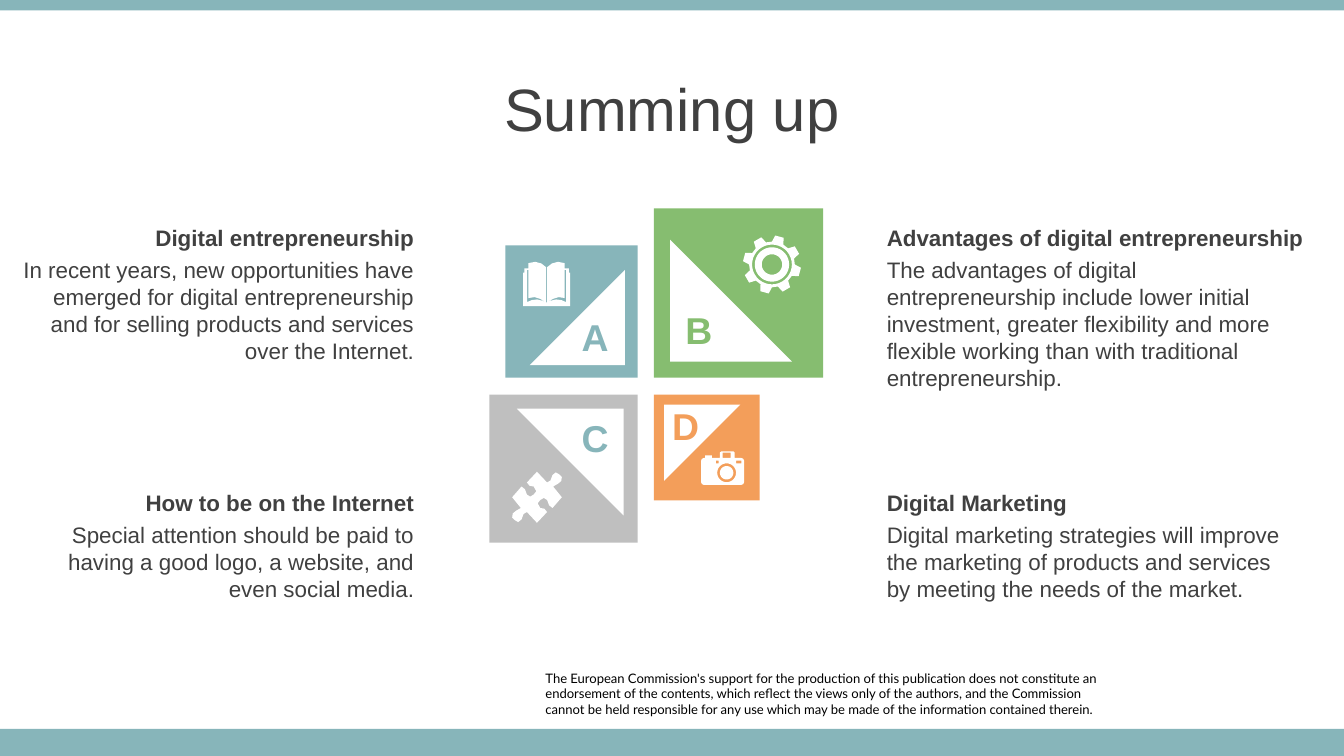
from dataclasses import dataclass
from math import cos, radians, sin

from pptx import Presentation, util as u
from pptx.dml.color import RGBColor
from pptx.enum import shapes, text


@dataclass
class Theme:
    teal: str = "87B5BA"
    green: str = "86BD70"
    grey: str = "BFBFBF"
    orange: str = "F39E5A"
    white: str = "FFFFFF"
    ink: str = "404040"
    black: str = "000000"
    face: str = "Arial"
    small: str = "Lato"
    title: int = 32
    mark: int = 20
    body: int = 12
    note: int = 7


def paint(shape, tone):
    shape.shadow.inherit = False
    shape.fill.solid()
    shape.fill.fore_color.rgb = RGBColor.from_string(tone)
    shape.line.fill.background()


def ring(x, y, r):
    return [(x + r * cos(radians(a)), y + r * sin(radians(a)))
            for a in range(0, 360, 10)]


theme = Theme()
kind = shapes.MSO_SHAPE
align = text.PP_ALIGN
deck = Presentation()
deck.slide_width, deck.slide_height = u.Cm(25.4), u.Cm(14.29)
slide = deck.slides.add_slide(deck.slide_layouts[6])
items = slide.shapes

# Bars at the top and bottom edges
for top, high in ((0, 0.2), (13.78, 0.51)):
    bar = items.add_shape(kind.RECTANGLE, 0, u.Cm(top), u.Cm(25.4), u.Cm(high))
    paint(bar, theme.teal)

# Four tiles around a cross, each with a triangle in its inner corner
left, right, upper, lower = 12.05, 12.36, 7.14, 7.46
tiles = [
    (left, upper, -1, -1, 2.5, 270, theme.teal),
    (right, upper, 1, -1, 3.2, 0, theme.green),
    (right, lower, 1, 1, 2.0, 90, theme.orange),
    (left, lower, -1, 1, 2.8, 180, theme.grey),
]
for x, y, dx, dy, size, turn, tone in tiles:
    inset, side = 0.095 * size, 0.72 * size
    for form, gap, edge, shade in ((kind.RECTANGLE, 0, size, tone),
                                   (kind.RIGHT_TRIANGLE, inset, side, theme.white)):
        px = x + gap if dx > 0 else x - gap - edge
        py = y + gap if dy > 0 else y - gap - edge
        tile = items.add_shape(form, u.Cm(px), u.Cm(py), u.Cm(edge), u.Cm(edge))
        tile.rotation = turn if form == kind.RIGHT_TRIANGLE else 0
        paint(tile, shade)

# Icon outlines, in hundredths of an inch
page = [(0.4, 4), (4, 1.2), (8.5, 0), (13.5, 1), (13.5, 27), (9, 26.3),
        (5, 27.5), (0.4, 30)]
cover = [(13.5, 5), (16.5, 5), (16.5, 8), (17.5, 8), (17.5, 33), (0, 33),
         (0, 30.3), (3, 29), (7, 28), (11, 28.5), (14.5, 30), (14.5, 6), (13.5, 6)]
book = [[(s * x, y) for x, y in loop] for loop in (page, cover) for s in (1, -1)]

half = [(16.5, -17), (18.5, -15), (18, -12), (15.5, -10), (12, -8), (18.5, 0),
        (11.5, 8), (9, 6), (7.5, 2), (5, 0.5), (2.5, 2), (0.5, 4.5), (2.5, 8),
        (5.5, 8.5), (7.5, 11), (0, 19), (-7.5, 11), (-10, 12.5), (-11.5, 16.5),
        (-14, 18.5)]
puzzle = [half + [(-x, -y) for x, y in half]]

teeth = [(r * cos(radians(15 + 45 * k + a)), r * sin(radians(15 + 45 * k + a)))
         for k in range(8)
         for a, r in ((-15, 17), (-8.5, 21.7), (8.5, 21.7), (15, 17))]
gear = [teeth] + [ring(0, 0, r) for r in (14.8, 12.8, 7.6)]

case = [(2, 5), (3, 5), (3, 3), (8, 3), (8, 5), (14, 5), (14, 1), (15, 0),
        (24, 0), (25, 1), (25, 5), (30, 5), (31.4, 5.6), (32, 7), (32, 23),
        (31.4, 24.4), (30, 25), (2, 25), (0.6, 24.4), (0, 23), (0, 7), (0.6, 5.6)]
slots = [[(a, b), (c, b), (c, d), (a, d)]
         for a, b, c, d in ((11, 7, 13, 9), (26, 7, 30, 9), (16, 1, 22, 5))]
camera = [case, *slots, ring(19, 16, 7), ring(19, 16, 5)]

# Icons
for loops, x, y in ((book, 10.33, 4.95), (puzzle, 10.15, 9.4),
                    (gear, 14.59, 5), (camera, 13.25, 8.53)):
    loops = [[(u.Cm(x + 0.0254 * a), u.Cm(y + 0.0254 * b)) for a, b in loop]
             for loop in loops]
    pen = items.build_freeform(*loops[0][0])
    pen.add_line_segments(loops[0][1:])
    for loop in loops[1:]:
        pen.move_to(*loop[0])
        pen.add_line_segments(loop[1:])
    paint(pen.convert_to_shape(), theme.white)

# Wording: place, lines, size, colour, bold, alignment
rows = [((0, 1.24, 25.4, 1.6), ["Summing up"], theme.title, theme.ink, False,
         align.CENTER)]
for x, y, mark, tone in ((10.69, 5.82, "A", theme.teal), (12.65, 5.69, "B", theme.green),
                         (10.69, 7.72, "C", theme.teal), (12.4, 7.49, "D", theme.orange)):
    rows.append(((x, y, 1.12, 1.12), [mark], theme.mark, tone, True, align.CENTER))

topics = [
    (0, 4.11, 8.08, align.RIGHT, "Digital entrepreneurship",
     "In recent years, new opportunities have emerged for digital entrepreneurship "
     "and for selling products and services over the Internet."),
    (0.31, 9.12, 7.77, align.RIGHT, "How to be on the Internet",
     "Special attention should be paid to having a good logo, a website, "
     "and even social media."),
    (16.51, 4.11, 8.51, align.LEFT, "Advantages of digital entrepreneurship",
     "The advantages of digital entrepreneurship include lower initial investment, "
     "greater flexibility and more flexible working than with traditional "
     "entrepreneurship."),
    (16.51, 9.12, 8.2, align.LEFT, "Digital Marketing",
     "Digital marketing strategies will improve the marketing of products and "
     "services by meeting the needs of the market."),
]
for x, y, wide, side, head, body in topics:
    high = 2.82 if y < 9 else 1.8
    rows.append(((x, y + 0.61, wide, high), [body], theme.body, theme.ink, False, side))
    rows.append(((x, y, wide, 0.76), [head], theme.body, theme.ink, True, side))

rows.append(((10.31, 12.67, 10.59, 0.89), [
    "The European Commission's support for the production of this publication does not "
    "constitute an endorsement of the contents, which reflect the views only of the "
    "authors, and the Commission",
    "cannot be held responsible for any use which may be made of the information "
    "contained therein."], theme.note, theme.black, False, align.LEFT))

# Text boxes
for place, lines, size, tone, bold, side in rows:
    frame = items.add_textbox(*map(u.Cm, place)).text_frame
    frame.word_wrap = True
    if size == theme.title:
        frame.vertical_anchor = text.MSO_ANCHOR.MIDDLE
    if size == theme.note:
        frame.margin_left = frame.margin_right = 0
        frame.margin_top = frame.margin_bottom = 0
    frame.text = "\n".join(lines)
    for para in frame.paragraphs:
        para.alignment = side
        font = para.font
        font.name = theme.small if size == theme.note else theme.face
        font.size, font.bold = u.Pt(size), bold
        font.color.rgb = RGBColor.from_string(tone)

deck.save("out.pptx")
